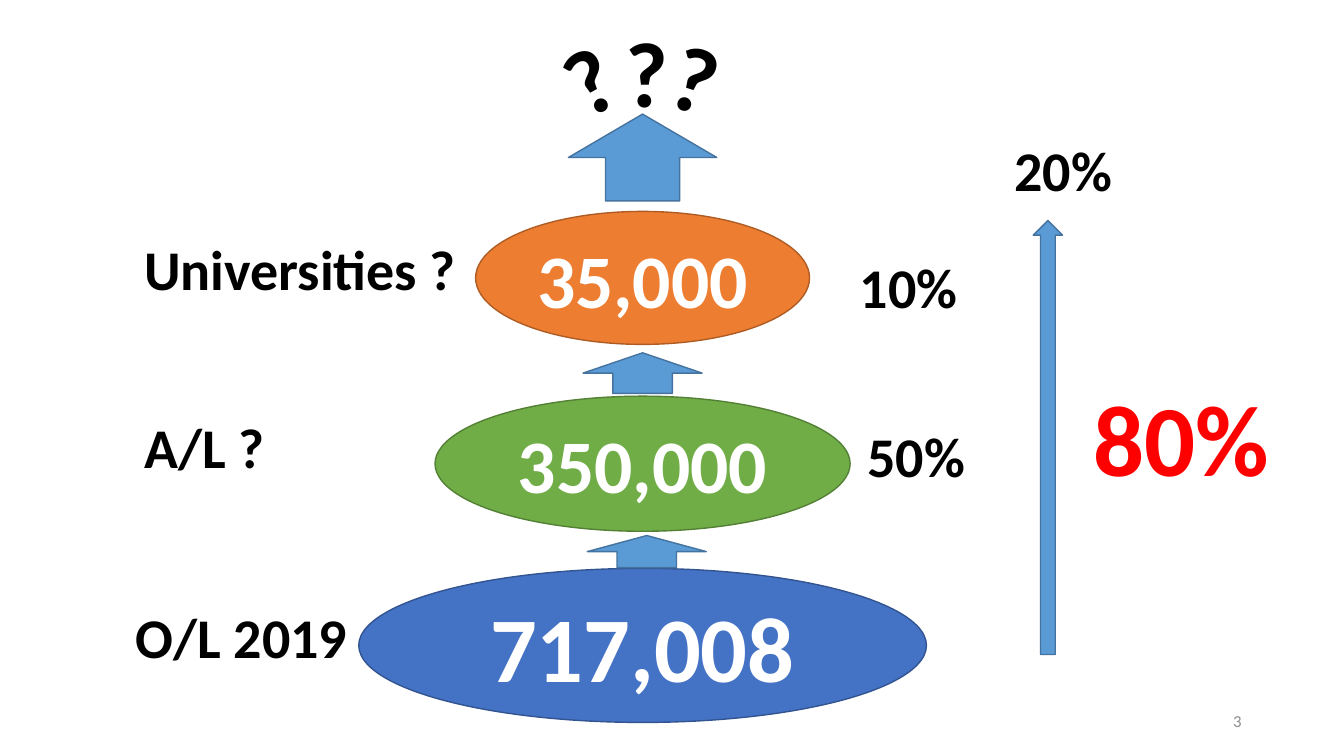
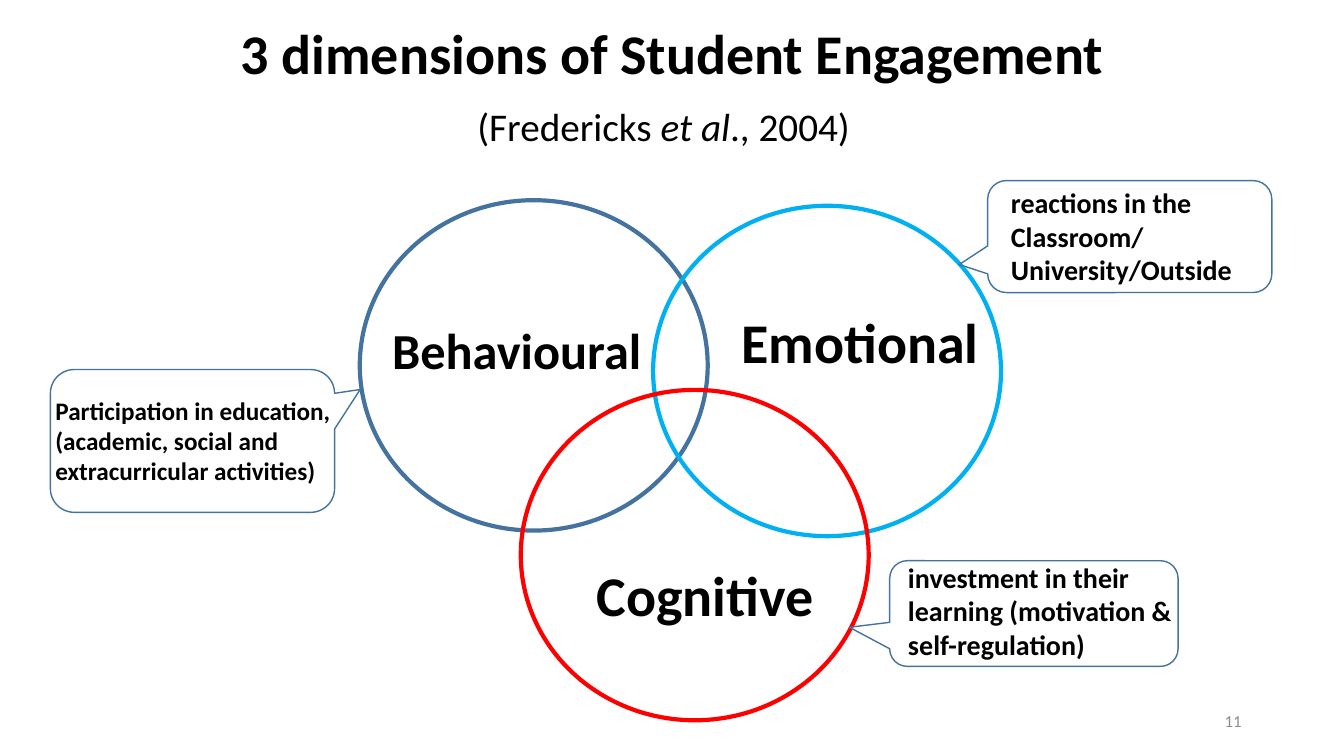
from pptx import Presentation
from pptx.dml.color import RGBColor
from pptx.enum.shapes import MSO_SHAPE
from pptx.enum.text import MSO_ANCHOR, MSO_AUTO_SIZE, PP_ALIGN
from pptx.util import Pt

FONT = "Calibri"
HEX = {
    "black": "000000", "white": "FFFFFF", "red": "FF0000", "grey": "8C8C8C",
    "blue": "4472C4", "navy": "325491", "green": "70AD47", "moss": "538035",
    "orange": "ED7D31", "rust": "AF5C24", "sky": "5B9BD5", "steel": "43739E",
    "cyan": "00B0F0",
}
LEFT, MID, RIGHT = PP_ALIGN.LEFT, PP_ALIGN.CENTER, PP_ALIGN.RIGHT


def write(frame, lines, size, color="black", bold=True, align=LEFT,
          anchor=MSO_ANCHOR.TOP):
    """Fill a text frame; each line is a list of (text, italic) runs."""
    frame.word_wrap = True
    frame.auto_size = MSO_AUTO_SIZE.NONE
    frame.vertical_anchor = anchor
    frame.margin_left = frame.margin_right = Pt(7.2)
    frame.margin_top = frame.margin_bottom = Pt(3.6)
    for i, line in enumerate(lines):
        para = frame.add_paragraph() if i else frame.paragraphs[0]
        para.alignment = align
        for text, slant in line:
            run = para.add_run()
            run.text = text
            font = run.font
            font.name, font.size = FONT, Pt(size)
            font.bold, font.italic = bold, slant
            font.color.rgb = RGBColor.from_string(HEX[color])


def draw(slide, kind, box, fill, line, width=1):
    """Add a preset shape; fill None leaves it clear."""
    shape = slide.shapes.add_shape(kind, *map(Pt, box))
    shape.shadow.inherit = False
    if fill:
        shape.fill.solid()
        shape.fill.fore_color.rgb = RGBColor.from_string(HEX[fill])
    else:
        shape.fill.background()
    shape.line.color.rgb = RGBColor.from_string(HEX[line])
    shape.line.width = Pt(width)
    return shape


deck = Presentation()
deck.slide_width, deck.slide_height = Pt(960), Pt(540)
funnel = deck.slides.add_slide(deck.slide_layouts[6])
venn = deck.slides.add_slide(deck.slide_layouts[5])

# Page numbers
for slide, page in ((funnel, "3"), (venn, "11")):
    foot = slide.shapes.add_textbox(Pt(678), Pt(500.5), Pt(216), Pt(28.75))
    write(foot.text_frame, [[(page, False)]], 12, "grey", False, RIGHT,
          MSO_ANCHOR.MIDDLE)

# Slide 1: stages, stacked on one axis
AXIS = 459
for text, top, wide, high, size, fill, line in (
    ("717,008", 406, 405.5, 110, 66, "blue", "navy"),
    ("350,000", 283, 296.5, 96.5, 54, "green", "moss"),
    ("35,000", 151, 238.5, 95, 54, "orange", "rust"),
):
    box = (AXIS - wide / 2, top, wide, high)
    stage = draw(funnel, MSO_SHAPE.OVAL, box, fill, line)
    write(stage.text_frame, [[(text, False)]], size, "white", align=MID,
          anchor=MSO_ANCHOR.MIDDLE)

# Slide 1: arrows
for axis, top, wide, high in (
    (AXIS, 81.5, 106, 62),
    (AXIS, 252, 85, 29),
    (AXIS + 3, 382.5, 85, 23),
    (748.5, 157.5, 21, 310),
):
    draw(funnel, MSO_SHAPE.UP_ARROW, (axis - wide / 2, top, wide, high),
         "sky", "steel")

# Slide 1: labels and shares
for text, left, top, wide, size, color, align, turn in (
    ("O/L 2019", 90, 427, 180, 40, "black", LEFT, 0),
    ("A/L ?", 96, 291, 135, 40, "black", LEFT, 0),
    ("Universities ?", 96, 164, 243, 40, "black", LEFT, 0),
    ("50%", 612.5, 297.5, 135, 40, "black", LEFT, 0),
    ("10%", 607, 177, 135, 40, "black", LEFT, 0),
    ("20%", 706.5, 93, 106, 40, "black", MID, 0),
    ("80%", 761, 265, 165.5, 72, "red", MID, 0),
    ("?", 398, 11, 49, 66, "black", LEFT, 330.9),
    ("?", 440, 7, 49, 66, "black", LEFT, 0),
    ("?", 474.5, 11.5, 49, 66, "black", LEFT, 17.9),
):
    label = funnel.shapes.add_textbox(Pt(left), Pt(top), Pt(wide),
                                      Pt(size * 1.22 + 7.2))
    label.rotation = turn
    write(label.text_frame, [[(text, False)]], size, color, align=align)

# Slide 2: title and citation
title = venn.shapes.title
title.left, title.top, title.width, title.height = map(Pt, (46, 9.5, 868, 57))
write(title.text_frame, [[("3 dimensions of Student Engagement", False)]],
      40, align=MID)
cite = venn.shapes.add_textbox(Pt(274), Pt(69.5), Pt(400), Pt(42))
write(cite.text_frame,
      [[("(Fredericks ", False), ("et al", True), ("., 2004)", False)]],
      28, bold=False, align=MID)

# Slide 2: circles
for left, top, line in ((257, 143, "steel"), (466.5, 147, "cyan"),
                        (372, 278.5, "red")):
    draw(venn, MSO_SHAPE.OVAL, (left, top, 248.5, 236), None, line, 3)

# Slide 2: callouts
for box, tip in (
    ((36, 264, 203, 102), (0.59, -0.36)),
    ((705.5, 129, 203, 80), (-0.6, 0.25)),
    ((635.5, 400.5, 206, 75.5), (-0.64, 0.13)),
):
    call = draw(venn, MSO_SHAPE.ROUNDED_RECTANGULAR_CALLOUT, box, None, "steel")
    call.adjustments[0], call.adjustments[1] = tip

# Slide 2: circle names and callout texts
for lines, left, top, wide, high, size in (
    (["Behavioural"], 273, 224.5, 195, 51, 36),
    (["Emotional"], 522.5, 216, 195, 56, 40),
    (["Cognitive"], 419, 396.5, 172, 56, 40),
    (["Participation in education,",
      "(academic, social and extracurricular activities)"],
     32.5, 278.5, 221, 73, 18),
    (["reactions in the", "Classroom/University/Outside"],
     715, 129, 194, 80, 20),
    (["investment in their learning (motivation &", "self-regulation)"],
     641.5, 396.5, 215.5, 80, 20),
):
    note = venn.shapes.add_textbox(Pt(left), Pt(top), Pt(wide), Pt(high))
    write(note.text_frame, [[(text, False)] for text in lines], size)

deck.save("out.pptx")
